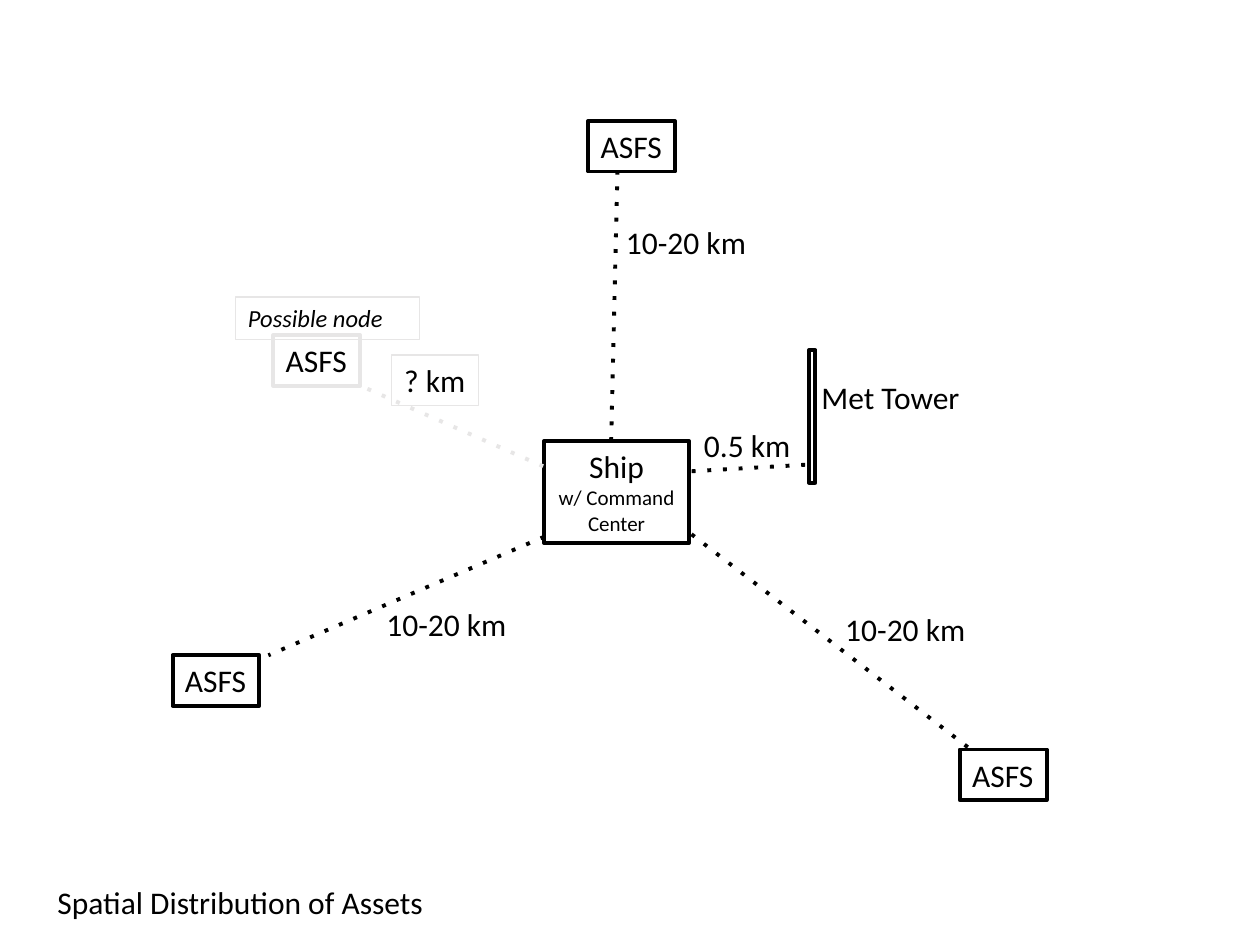
"""Build a slide showing the spatial distribution of assets around a ship."""
from lxml.etree import SubElement
from pptx import Presentation
from pptx.dml.color import RGBColor
from pptx.enum.shapes import MSO_CONNECTOR, MSO_SHAPE
from pptx.enum.text import MSO_ANCHOR, PP_ALIGN
from pptx.oxml.ns import qn
from pptx.util import Cm, Pt

COLORS = {"black": "000000", "gray": "E7E6E6"}
ROW_HEIGHT = 1.02
NODE_WIDTH = 1.75
DISTANCE_WIDTH = 2.95

presentation = Presentation()
presentation.slide_width = Cm(25.4)
presentation.slide_height = Cm(19.05)
slide = presentation.slides.add_slide(presentation.slide_layouts[6])


def add_label(text, left, top, width, height=ROW_HEIGHT, size=18, italic=False,
              outline=None, weight=2.25, wrap=False, align=PP_ALIGN.LEFT, note=None):
    box = [Cm(length) for length in (left, top, width, height)]
    if outline:
        shape = slide.shapes.add_shape(MSO_SHAPE.RECTANGLE, *box)
        shape.shadow.inherit = False
        shape.fill.background()
        shape.line.color.rgb = RGBColor.from_string(COLORS[outline])
        shape.line.width = Pt(weight)
    else:
        shape = slide.shapes.add_textbox(*box)
    frame = shape.text_frame
    frame.word_wrap = wrap
    frame.vertical_anchor = MSO_ANCHOR.TOP
    lines = [(text, size)] + ([(note, 12)] if note else [])
    frame.text = "\n".join(content for content, _ in lines)
    for paragraph, (_, points) in zip(frame.paragraphs, lines):
        paragraph.alignment = align
        font = paragraph.font
        for run in paragraph.runs:
            font = run.font
            font.name = "Calibri"
            font.size = Pt(points)
            font.italic = italic
            font.color.rgb = RGBColor.from_string(COLORS["black"])


add_label("Spatial Distribution of Assets", 0.91, 17.68, 15.85, wrap=True)

tower = slide.shapes.add_shape(MSO_SHAPE.RECTANGLE, Cm(16.31), Cm(7.06), Cm(0.13), Cm(2.67))
tower.shadow.inherit = False
tower.fill.background()
tower.line.color.rgb = RGBColor.from_string(COLORS["black"])
tower.line.width = Pt(2.25)

add_label("Ship", 10.97, 8.89, 2.92, 2.06, outline="black", wrap=True,
          align=PP_ALIGN.CENTER, note="w/ Command Center")

for left, top, outline in [
    (11.86, 2.44, "black"),
    (5.51, 6.76, "gray"),
    (19.35, 15.11, "black"),
    (3.48, 13.21, "black"),
]:
    add_label("ASFS", left, top, NODE_WIDTH, outline=outline)

for start_x, start_y, end_x, end_y, color in [
    (10.97, 10.82, 5.41, 13.21, "black"),
    (13.94, 10.77, 19.61, 15.14, "black"),
    (12.32, 8.89, 12.45, 3.33, "black"),
    (16.23, 9.37, 13.94, 9.5, "black"),
    (10.95, 9.4, 7.32, 7.8, "gray"),
]:
    connector = slide.shapes.add_connector(
        MSO_CONNECTOR.STRAIGHT, Cm(start_x), Cm(start_y), Cm(end_x), Cm(end_y))
    connector.line.color.rgb = RGBColor.from_string(COLORS[color])
    connector.line.width = Pt(2.25)
    properties = connector._element.spPr
    SubElement(properties.find(qn("a:ln")), qn("a:prstDash")).set("val", "dot")
    SubElement(properties, qn("a:effectLst"))

for text, left, top, width in [
    ("Met Tower", 16.31, 7.49, 3.33),
    ("10-20 km", 12.37, 4.37, DISTANCE_WIDTH),
    ("0.5 km", 13.94, 8.46, 2.26),
    ("10-20 km", 7.54, 12.07, DISTANCE_WIDTH),
    ("10-20 km", 16.79, 12.17, DISTANCE_WIDTH),
]:
    add_label(text, left, top, width)

add_label("? km", 7.9, 7.16, NODE_WIDTH, outline="gray", weight=0.75)
add_label("Possible node", 4.75, 5.99, 3.71, 0.86, size=14, italic=True,
          outline="gray", weight=0.75, wrap=True)

presentation.save("out.pptx")
